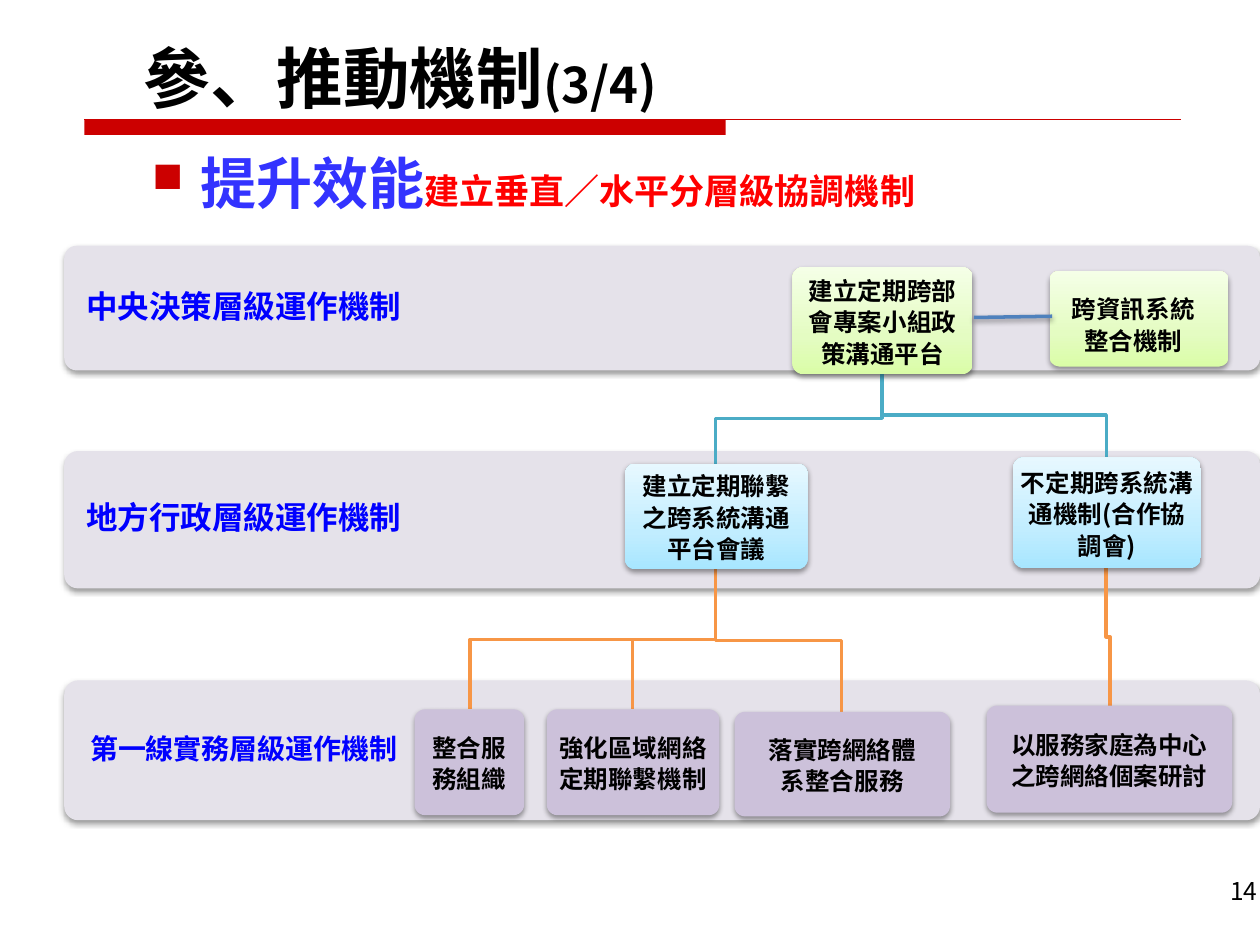
from copy import deepcopy

from lxml import etree
from pptx import Presentation
from pptx.dml.color import RGBColor
from pptx.enum.shapes import MSO_CONNECTOR, MSO_SHAPE
from pptx.enum.text import MSO_ANCHOR, MSO_AUTO_SIZE, PP_ALIGN
from pptx.oxml.ns import qn
from pptx.util import Inches, Pt

ROUNDED, RECTANGLE = MSO_SHAPE.ROUNDED_RECTANGLE, MSO_SHAPE.RECTANGLE
STRAIGHT = MSO_CONNECTOR.STRAIGHT
TOP, MIDDLE, BOTTOM = MSO_ANCHOR.TOP, MSO_ANCHOR.MIDDLE, MSO_ANCHOR.BOTTOM
LEFT, CENTER, RIGHT = PP_ALIGN.LEFT, PP_ALIGN.CENTER, PP_ALIGN.RIGHT
NO_FIT = MSO_AUTO_SIZE.NONE

BLACK = RGBColor(0x00, 0x00, 0x00)
DARK_RED = RGBColor(0xCC, 0x00, 0x00)
RED = RGBColor(0xFF, 0x00, 0x00)
VIOLET_BLUE = RGBColor(0x33, 0x33, 0xFF)
BLUE = RGBColor(0x00, 0x00, 0xFF)
BAND_GRAY = RGBColor(0xE5, 0xE2, 0xEA)
PURPLE = RGBColor(0xCC, 0xC1, 0xDA)
TEAL = RGBColor(0x4B, 0xAC, 0xC6)
ORANGE = RGBColor(0xF7, 0x96, 0x46)
STEEL_BLUE = RGBColor(0x4F, 0x81, 0xBD)
GREENS = [RGBColor(0xDA, 0xFD, 0xA7), RGBColor(0xE4, 0xFC, 0xC2), RGBColor(0xF5, 0xFF, 0xE7)]
SKIES = [RGBColor(0xA7, 0xE6, 0xFF), RGBColor(0xC1, 0xED, 0xFF), RGBColor(0xE7, 0xF8, 0xFF)]
CJK_FONT = "Noto Sans CJK SC"


def set_frame(shape, anchor=TOP, margins=(0.1, 0.05, 0.1, 0.05)):
    frame = shape.text_frame
    frame.word_wrap = True
    frame.auto_size = NO_FIT
    frame.vertical_anchor = anchor
    frame.margin_left, frame.margin_top, frame.margin_right, frame.margin_bottom = map(Inches, margins)
    return frame


def write(paragraph, text, size=14, color=BLACK, bold=True, font=CJK_FONT, align=LEFT, spacing=None):
    paragraph.alignment = align
    paragraph.line_spacing = spacing
    run = paragraph.add_run()
    run.text = text
    run.font.size = Pt(size)
    run.font.bold = bold
    run.font.color.rgb = color
    run.font.name = font
    east_asian = etree.SubElement(run.font._element, qn("a:ea"))
    east_asian.set("typeface", CJK_FONT if font == "Arial" else font)


presentation = Presentation()
presentation.slide_width = Inches(10)
presentation.slide_height = Inches(7.5)
slide = presentation.slides.add_slide(presentation.slide_layouts[5])
shapes = slide.shapes
raised = []

title = shapes.title
title.left, title.top, title.width, title.height = map(Inches, (1.04, -0.27, 9, 1.25))
title_paragraph = set_frame(title, BOTTOM).paragraphs[0]
write(title_paragraph, "參、推動機制", size=38)
write(title_paragraph, "(3/4)", size=28)

title_bar = shapes.add_shape(RECTANGLE, Inches(0.67), Inches(0.95), Inches(5.09), Inches(0.12))
title_bar.fill.solid()
title_bar.fill.fore_color.rgb = DARK_RED
title_bar.line.fill.background()
title_bar.shadow.inherit = False
title_rule = shapes.add_connector(STRAIGHT, Inches(0.67), Inches(0.95), Inches(9.37), Inches(0.95))
title_rule.line.color.rgb = DARK_RED
title_rule.line.width = Pt(0.75)
etree.SubElement(title_rule._element.spPr, qn("a:effectLst"))

subtitle = shapes.add_textbox(Inches(1.11), Inches(1.13), Inches(9.03), Inches(0.74))
subtitle_paragraph = set_frame(subtitle).paragraphs[0]
properties = subtitle_paragraph._p.get_or_add_pPr()
properties.set("marL", str(Inches(0.38)))
properties.set("indent", str(-Inches(0.38)))
bullet_color = etree.SubElement(properties, qn("a:buClr"))
etree.SubElement(bullet_color, qn("a:srgbClr"), val=str(DARK_RED))
etree.SubElement(properties, qn("a:buSzPct"), val="75000")
etree.SubElement(properties, qn("a:buChar"), char="■")
write(subtitle_paragraph, "提升效能", size=32, color=VIOLET_BLUE, font="Arial")
write(subtitle_paragraph, "建立垂直／水平分層級協調機制", size=20, color=RED)

bands = [
    ("中央決策層級運作機制", 1.95, 0.99, 18),
    ("地方行政層級運作機制", 3.58, 1.09, 18),
    ("第一線實務層級運作機制", 5.4, 1.11, 16),
]
for text, top, height, size in bands:
    band = shapes.add_shape(ROUNDED, Inches(0.51), Inches(top), Inches(9.49), Inches(height))
    band.adjustments[0] = 0.1
    band.fill.solid()
    band.fill.fore_color.rgb = BAND_GRAY
    band.line.fill.background()
    raised.append(band)
    label = shapes.add_textbox(Inches(0.51), Inches(top), Inches(2.85), Inches(height))
    frame = set_frame(label, MIDDLE, (0.12,) * 4)
    write(frame.paragraphs[0], text, size=size, color=BLUE, align=CENTER, spacing=0.9)

branches = [
    (7, 2.96, 5.68, 3.68, TEAL),
    (7, 2.96, 8.78, 3.63, TEAL),
    (5.68, 4.52, 3.73, 5.63, ORANGE),
    (5.68, 4.52, 5.02, 5.63, ORANGE),
    (5.68, 4.52, 6.68, 5.65, ORANGE),
    (8.78, 4.51, 8.81, 5.6, ORANGE),
]
for start_x, start_y, end_x, end_y, color in branches:
    middle_y = (start_y + end_y) / 2
    builder = shapes.build_freeform(Inches(start_x), Inches(start_y))
    corners = [(start_x, middle_y), (end_x, middle_y), (end_x, end_y)]
    builder.add_line_segments([(Inches(x), Inches(y)) for x, y in corners], close=False)
    branch = builder.convert_to_shape()
    branch.fill.background()
    branch.line.color.rgb = color
    branch.line.width = Pt(2)
    branch.shadow.inherit = False

even = (0.03,) * 4
shifted = (0.03, 0.11, 0.12, 0.03)
boxes = [
    ("建立定期跨部會專案小組政策溝通平台", 6.29, 2.12, 1.43, 0.85, GREENS, even),
    ("跨資訊系統\n整合機制", 8.33, 2.15, 1.42, 0.76, GREENS, shifted),
    ("建立定期聯繫之跨系統溝通平台會議", 4.96, 3.68, 1.45, 0.84, SKIES, even),
    ("不定期跨系統溝通機制(合作協調會)", 8.04, 3.63, 1.49, 0.88, SKIES, even),
    ("整合服務組織", 3.29, 5.63, 0.87, 0.84, PURPLE, even),
    ("強化區域網絡定期聯繫機制", 4.34, 5.63, 1.37, 0.84, PURPLE, even),
    ("落實跨網絡體\n系整合服務", 5.83, 5.65, 1.71, 0.83, PURPLE, even),
    ("以服務家庭為中心\n之跨網絡個案研討", 7.83, 5.6, 1.95, 0.85, PURPLE, even),
]
for text, left, top, width, height, fill, margins in boxes:
    box = shapes.add_shape(ROUNDED, Inches(left), Inches(top), Inches(width), Inches(height))
    box.adjustments[0] = 0.1
    if fill == PURPLE:
        box.fill.solid()
        box.fill.fore_color.rgb = fill
    else:
        box.fill.gradient()
        box.fill.gradient_angle = 90
        stop_list = box._element.spPr.find(qn("a:gradFill")).find(qn("a:gsLst"))
        stop_list.insert(1, deepcopy(stop_list[0]))
        for stop, position, color in zip(box.fill.gradient_stops, (0, 0.35, 1), fill):
            stop.position = position
            stop.color.rgb = color
    box.line.fill.background()
    raised.append(box)
    frame = set_frame(box, MIDDLE, margins)
    for index, line in enumerate(text.split("\n")):
        paragraph = frame.add_paragraph() if index else frame.paragraphs[0]
        write(paragraph, line, align=CENTER, spacing=Pt(18))

system_link = shapes.add_connector(STRAIGHT, Inches(7.73), Inches(2.52), Inches(8.35), Inches(2.51))
system_link.line.color.rgb = STEEL_BLUE
system_link.line.width = Pt(2)
raised.append(system_link)

for shape in raised:
    effects = etree.SubElement(shape._element.spPr, qn("a:effectLst"))
    shadow = etree.SubElement(
        effects, qn("a:outerShdw"), blurRad=str(Pt(3.1)), dist=str(Pt(1.6)), dir="5400000", rotWithShape="0"
    )
    shadow_color = etree.SubElement(shadow, qn("a:srgbClr"), val=str(BLACK))
    etree.SubElement(shadow_color, qn("a:alpha"), val="38000")

page_number = shapes.add_textbox(Inches(9.57), Inches(6.9), Inches(0.51), Inches(0.52))
write(set_frame(page_number).paragraphs[0], "14", bold=False, font="Noto Sans CJK TC", align=RIGHT)

presentation.save("out.pptx")
